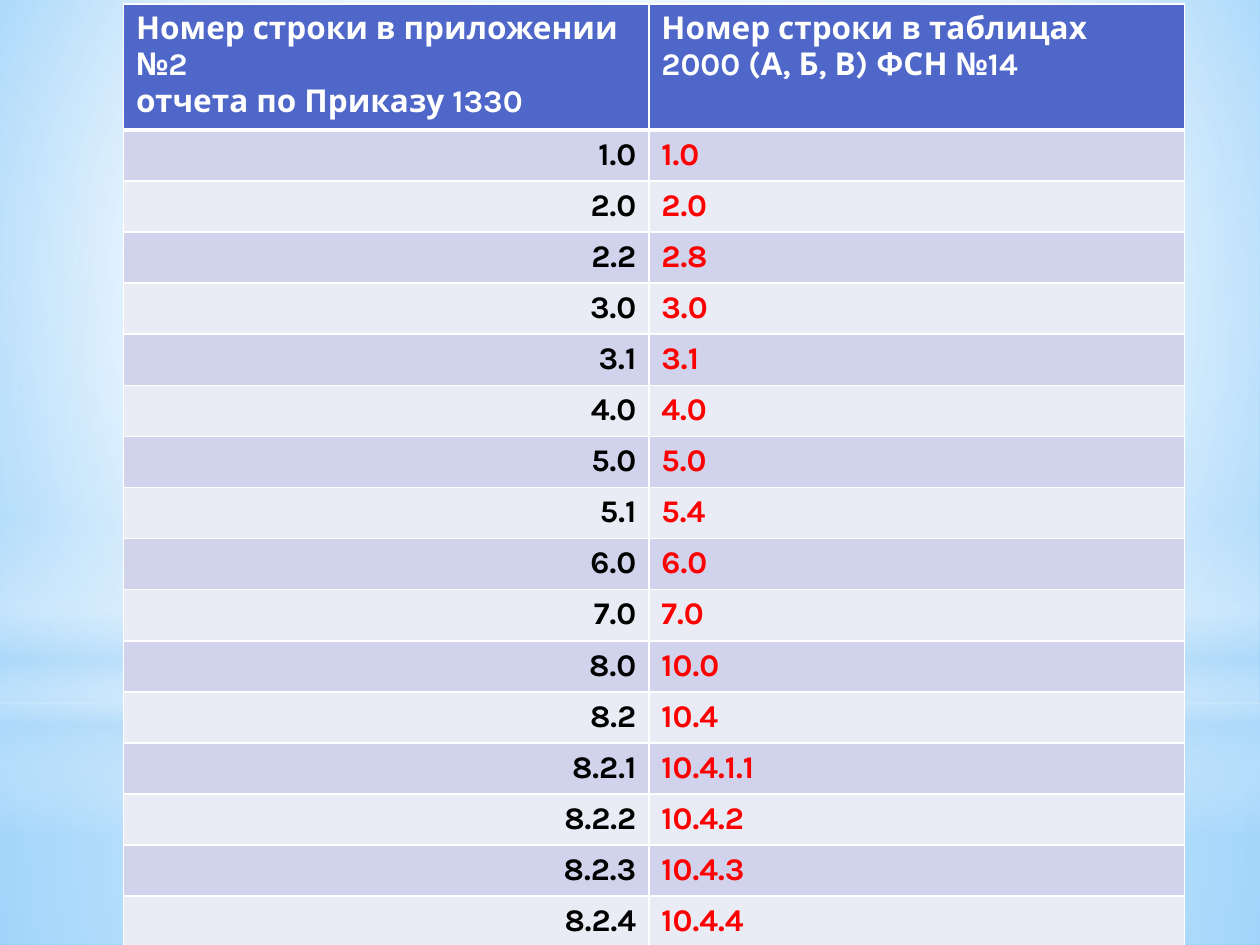
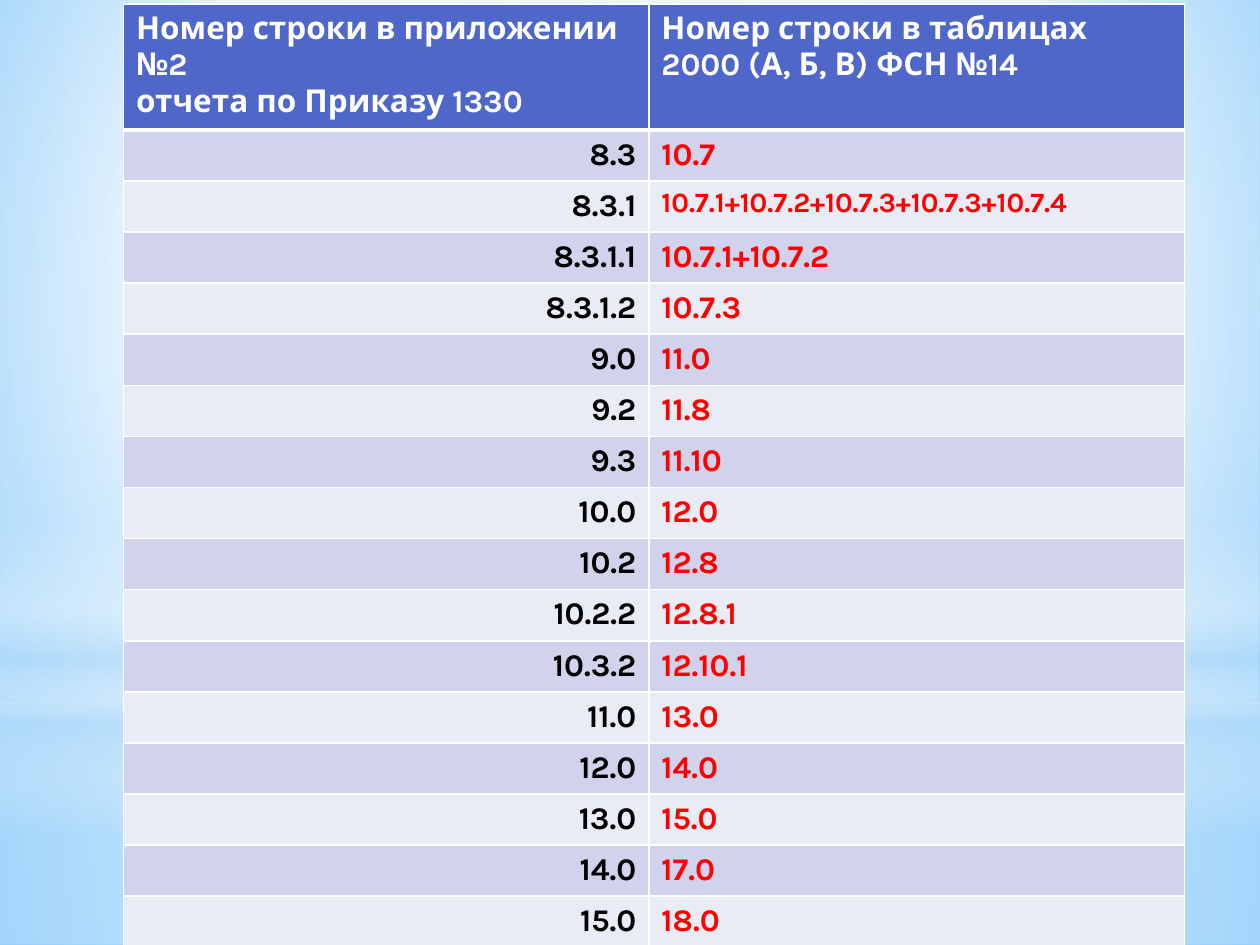
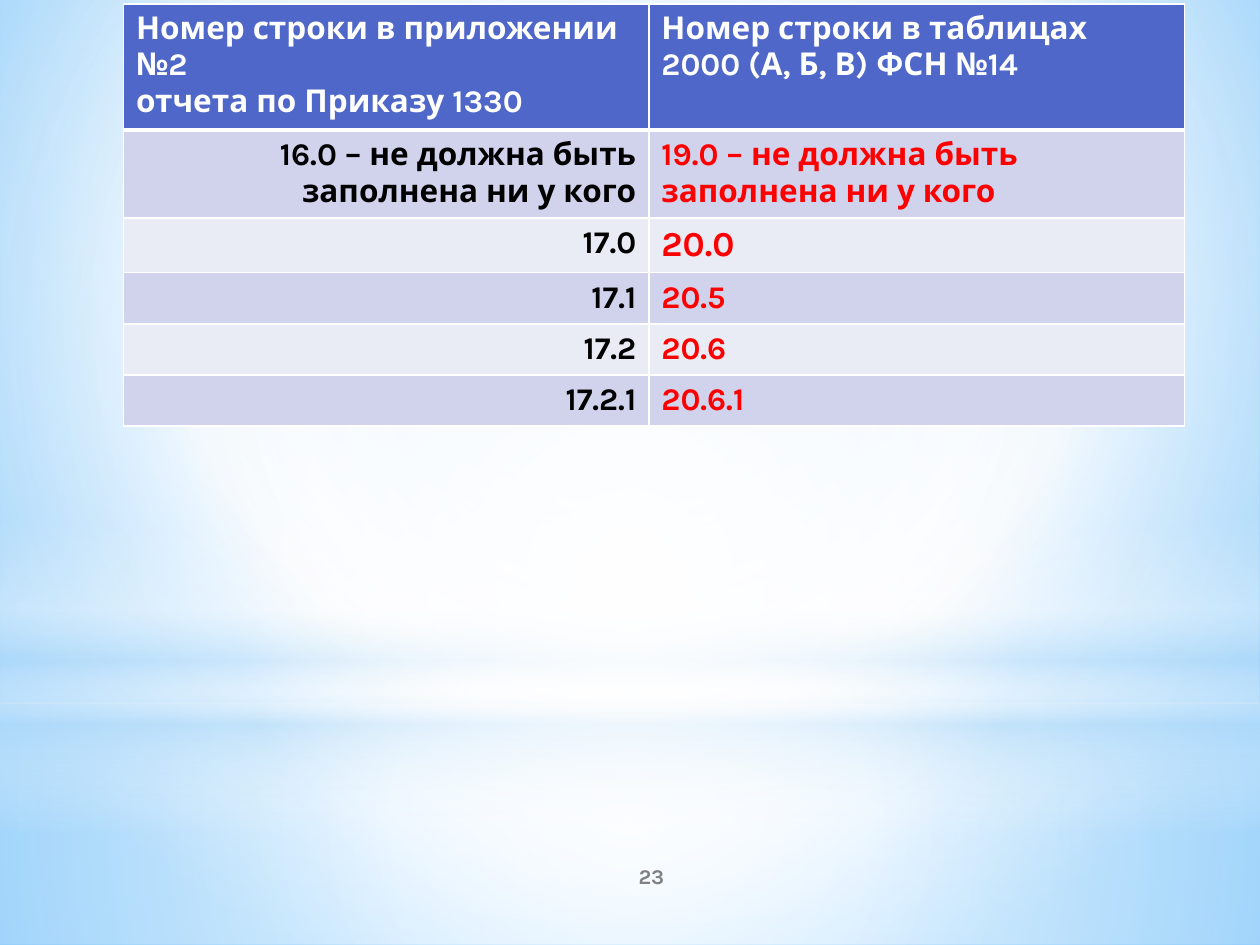
from typing import NamedTuple, Optional

from lxml import etree
from pptx import Presentation
from pptx import util as u
from pptx.dml.color import RGBColor
from pptx.enum import shapes, text
from pptx.oxml import ns

FONT = "Karla"
HEX = {
    "white": "FFFFFF", "black": "000000", "red": "FF0000", "grey": "808080",
    "head": "4E67C8", "dark": "D0D3EB", "light": "E9EBF5",
    "sky": "9ED5FF", "blue": "5BB9FF", "pale": "B4DCFA",
}


class Stop(NamedTuple):
    pos: int
    color: str
    alpha: int = 100


class Glow(NamedTuple):
    """Gradient: radial towards a focus rectangle, or top to bottom without one."""
    stops: list[Stop]
    focus: Optional[tuple[int, int, int, int]] = (50, 50, 50, 50)


class Band(NamedTuple):
    kind: shapes.MSO_SHAPE
    top: float
    height: float
    glow: Glow


class Row(NamedTuple):
    left: str
    right: str
    size: int = 18


SKY = Glow([Stop(0, "sky"), Stop(60, "white"), Stop(100, "blue")], (20, 10, 20, 60))
RECT, OVAL = shapes.MSO_SHAPE.RECTANGLE, shapes.MSO_SHAPE.OVAL
BANDS = [
    Band(RECT, 5.58, 1.92, Glow([
        Stop(0, "white", 91), Stop(37, "white", 76), Stop(100, "pale", 79)])),
    Band(RECT, 0, 5.58, Glow([
        Stop(0, "white", 89), Stop(48, "white", 62), Stop(100, "pale", 79)])),
    Band(RECT, 4.12, 2.5, Glow([
        Stop(0, "white", 0), Stop(29, "white", 30), Stop(45, "pale", 40),
        Stop(55, "white", 26), Stop(65, "pale", 60), Stop(100, "white", 0)], None)),
    Band(OVAL, 1.75, 5.58, Glow([Stop(0, "white"), Stop(56, "white", 0)])),
]

HEAD = Row("Номер строки в приложении №2\nотчета по Приказу 1330",
           "Номер строки в таблицах 2000 (А, Б, В) ФСН №14")
FIRST = 21
PAGES = [
    [
        Row("1.0", "1.0"), Row("2.0", "2.0"), Row("2.2", "2.8"), Row("3.0", "3.0"),
        Row("3.1", "3.1"), Row("4.0", "4.0"), Row("5.0", "5.0"), Row("5.1", "5.4"),
        Row("6.0", "6.0"), Row("7.0", "7.0"), Row("8.0", "10.0"), Row("8.2", "10.4"),
        Row("8.2.1", "10.4.1.1"), Row("8.2.2", "10.4.2"),
        Row("8.2.3", "10.4.3"), Row("8.2.4", "10.4.4"),
    ],
    [
        Row("8.3", "10.7"), Row("8.3.1", "10.7.1+10.7.2+10.7.3+10.7.3+10.7.4", 16),
        Row("8.3.1.1", "10.7.1+10.7.2"), Row("8.3.1.2", "10.7.3"),
        Row("9.0", "11.0"), Row("9.2", "11.8"), Row("9.3", "11.10"),
        Row("10.0", "12.0"), Row("10.2", "12.8"), Row("10.2.2", "12.8.1"),
        Row("10.3.2", "12.10.1"), Row("11.0", "13.0"), Row("12.0", "14.0"),
        Row("13.0", "15.0"), Row("14.0", "17.0"), Row("15.0", "18.0"),
    ],
    [
        Row("16.0 – не должна быть заполнена ни у кого",
            "19.0 – не должна быть заполнена ни у кого"),
        Row("17.0", "20.0", 20), Row("17.1", "20.5"),
        Row("17.2", "20.6"), Row("17.2.1", "20.6.1"),
    ],
]


def add(parent, tag: str, **attrs):
    return etree.SubElement(parent, ns.qn(tag), {k: str(v) for k, v in attrs.items()})


def shade(props, glow: Glow) -> None:
    """Swap the empty fill of a properties element for a gradient."""
    grad = etree.Element(ns.qn("a:gradFill"), rotWithShape="1")
    stops = add(grad, "a:gsLst")
    for stop in glow.stops:
        mark = add(stops, "a:gs", pos=stop.pos * 1000)
        color = add(mark, "a:srgbClr", val=HEX[stop.color])
        if stop.alpha < 100:
            add(color, "a:alpha", val=stop.alpha * 1000)
    if glow.focus:
        way = add(grad, "a:path", path="circle")
        sides = {side: part * 1000 for side, part in zip("ltrb", glow.focus)}
        add(way, "a:fillToRect", **sides)
    else:
        add(grad, "a:lin", ang=90 * 60000, scaled=0)
    props.replace(props.find(ns.qn("a:noFill")), grad)


def dress(master, slide) -> None:
    """Give the master its backdrop; bands are drawn on a slide, then moved."""
    master.background.fill.background()
    shade(master.element.find(".//" + ns.qn("p:bgPr")), SKY)
    for i, band in enumerate(BANDS):
        shape = slide.shapes.add_shape(
            band.kind, 0, u.Inches(band.top), u.Inches(10), u.Inches(band.height))
        shape.shadow.inherit = False
        shape.fill.background()
        shade(shape.element.spPr, band.glow)
        shape.line.fill.background()
        shape.element.find(".//" + ns.qn("p:cNvPr")).set("id", str(100 + i))
        master.shapes.element.insert(2 + i, shape.element)


def write(frame, words: str, size: int, color: str, align: text.PP_ALIGN) -> None:
    frame.text = words
    for par in frame.paragraphs:
        par.alignment = align
        font = par.font
        font.name, font.size, font.bold = FONT, u.Pt(size), True
        font.color.rgb = RGBColor.from_string(HEX[color])


def paint(cell, fill: str, base: int) -> None:
    """Fill a cell and rule it in white, with the given bottom width in points."""
    cell.fill.solid()
    cell.fill.fore_color.rgb = RGBColor.from_string(HEX[fill])
    props = cell.fill._xPr
    for i, (side, width) in enumerate(zip("LRTB", (1, 1, 1, base))):
        line = etree.Element(ns.qn(f"a:ln{side}"), w=str(u.Pt(width)))
        add(add(line, "a:solidFill"), "a:srgbClr", val=HEX["white"])
        props.insert(i, line)


def tabulate(slide, rows: list[Row]) -> None:
    high = u.Pt(29.2)
    wide = (u.Inches(4.17), u.Inches(4.25))
    table = slide.shapes.add_table(
        len(rows) + 1, 2, u.Inches(0.98), u.Inches(0.03),
        sum(wide), high * (len(rows) + 1)).table
    for col, width in zip(table.columns, wide):
        col.width = width
    left, right = text.PP_ALIGN.LEFT, text.PP_ALIGN.RIGHT
    for i, row in enumerate([HEAD, *rows]):
        table.rows[i].height = high
        top = i == 0
        fill = "head" if top else ("light", "dark")[i % 2]
        one, two = table.cell(i, 0), table.cell(i, 1)
        write(one.text_frame, row.left, 18, "white" if top else "black",
              left if top else right)
        write(two.text_frame, row.right, row.size, "white" if top else "red", left)
        for cell in (one, two):
            paint(cell, fill, 3 if top else 1)


def number(slide, page: int) -> None:
    box = slide.shapes.add_textbox(
        u.Inches(4.17), u.Inches(6.75), u.Inches(2), u.Inches(0.4))
    frame = box.text_frame
    frame.word_wrap = True
    frame.vertical_anchor = text.MSO_ANCHOR.MIDDLE
    write(frame, str(page), 12, "grey", text.PP_ALIGN.CENTER)


def main() -> None:
    deck = Presentation()
    deck.slide_width, deck.slide_height = u.Inches(10), u.Inches(7.5)
    for page, rows in enumerate(PAGES, FIRST):
        slide = deck.slides.add_slide(deck.slide_layouts[6])
        if page == FIRST:
            dress(deck.slide_master, slide)
        number(slide, page)
        tabulate(slide, rows)
    deck.save("out.pptx")


if __name__ == "__main__":
    main()
